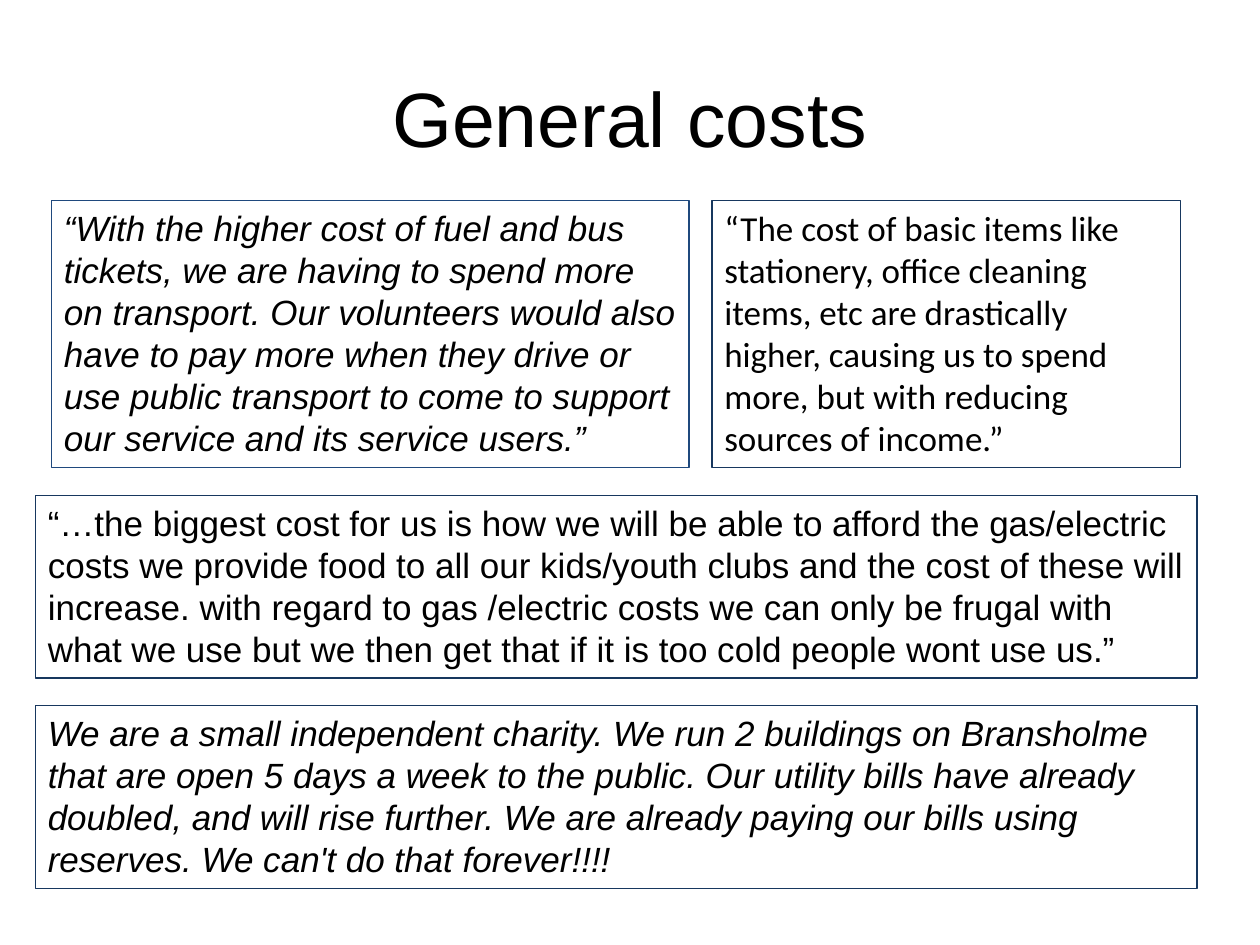
from pptx import Presentation
from pptx.dml.color import RGBColor
from pptx.enum.shapes import MSO_SHAPE
from pptx.enum.text import MSO_ANCHOR, PP_ALIGN
from pptx.util import Pt

RECT = MSO_SHAPE.RECTANGLE
LEFT, CENTER = PP_ALIGN.LEFT, PP_ALIGN.CENTER
TOP, MIDDLE = MSO_ANCHOR.TOP, MSO_ANCHOR.MIDDLE

BLACK = RGBColor(0x00, 0x00, 0x00)
BLUE = RGBColor(0x1F, 0x49, 0x7D)
NAVY = RGBColor(0x17, 0x37, 0x5E)

TOP_ROW, TOP_HEIGHT = 114.5, 152.6
WIDE_LEFT, WIDE_WIDTH, WIDE_HEIGHT = 20.2, 663.8, 104.4
WIDE_TOP, WIDE_STEP = 283, 120.2

FUEL = ("“With the higher cost of fuel and bus tickets, we are having to spend "
        "more on transport. Our volunteers would also have to pay more when they "
        "drive or use public transport to come to support our service and its "
        "service users.”")
ITEMS = ("“The cost of basic items like stationery, office cleaning items, etc are "
         "drastically higher, causing us to spend more, but with reducing sources "
         "of income.”")
ENERGY = ("“…the biggest cost for us is how we will be able to afford the "
          "gas/electric costs we provide food to all our kids/youth clubs and the "
          "cost of these will increase. with regard to gas /electric costs we can "
          "only be frugal with what we use but we then get that if it is too cold "
          "people wont use us.”")
CHARITY = ("We are a small independent charity. We run 2 buildings on Bransholme "
           "that are open 5 days a week to the public. Our utility bills have "
           "already doubled, and will rise further. We are already paying our "
           "bills using reserves. We can't do that forever!!!!")


class Deck:
    """Holds the style and the current slide."""
    font = "Arial"
    title_size, quote_size, line_pitch = 44, 20, 24

    def __init__(self, width, height):
        self.prs = Presentation()
        self.prs.slide_width, self.prs.slide_height = Pt(width), Pt(height)
        self.s = self.prs.slides.add_slide(self.prs.slide_layouts[5])

    def set_text(self, tf, text, size, font, align, anchor):
        tf.word_wrap = True
        tf.vertical_anchor = anchor
        p = tf.paragraphs[0]
        p.text = text
        p.alignment = align
        p.font.name, p.font.size = font, Pt(size)
        p.font.color.rgb = BLACK
        return p

    def title(self, text, x, y, w, h):
        sp = self.s.shapes.title
        sp.left, sp.top, sp.width, sp.height = Pt(x), Pt(y), Pt(w), Pt(h)
        self.set_text(sp.text_frame, text, self.title_size, self.font, CENTER, MIDDLE)

    def quote(self, text, x, y, w, h, line=NAVY, font=font, italic=False):
        sp = self.s.shapes.add_shape(RECT, Pt(x), Pt(y), Pt(w), Pt(h))
        sp.shadow.inherit = False
        sp.fill.background()
        sp.line.color.rgb = line
        sp.line.width = Pt(0.75)
        p = self.set_text(sp.text_frame, text, self.quote_size, font, LEFT, TOP)
        p.font.italic = italic
        p.line_spacing = Pt(self.line_pitch)


def main():
    deck = Deck(720, 540)
    deck.title("General costs", 36, 21.6, 648, 90)
    deck.quote(FUEL, 29.5, TOP_ROW, 364.3, TOP_HEIGHT, line=BLUE, italic=True)
    deck.quote(ITEMS, 406.8, TOP_ROW, 267.8, TOP_HEIGHT, font="Calibri")
    for i, (text, italic) in enumerate([(ENERGY, False), (CHARITY, True)]):
        deck.quote(text, WIDE_LEFT, WIDE_TOP + i * WIDE_STEP,
                   WIDE_WIDTH, WIDE_HEIGHT, italic=italic)
    deck.prs.save("out.pptx")


if __name__ == "__main__":
    main()
